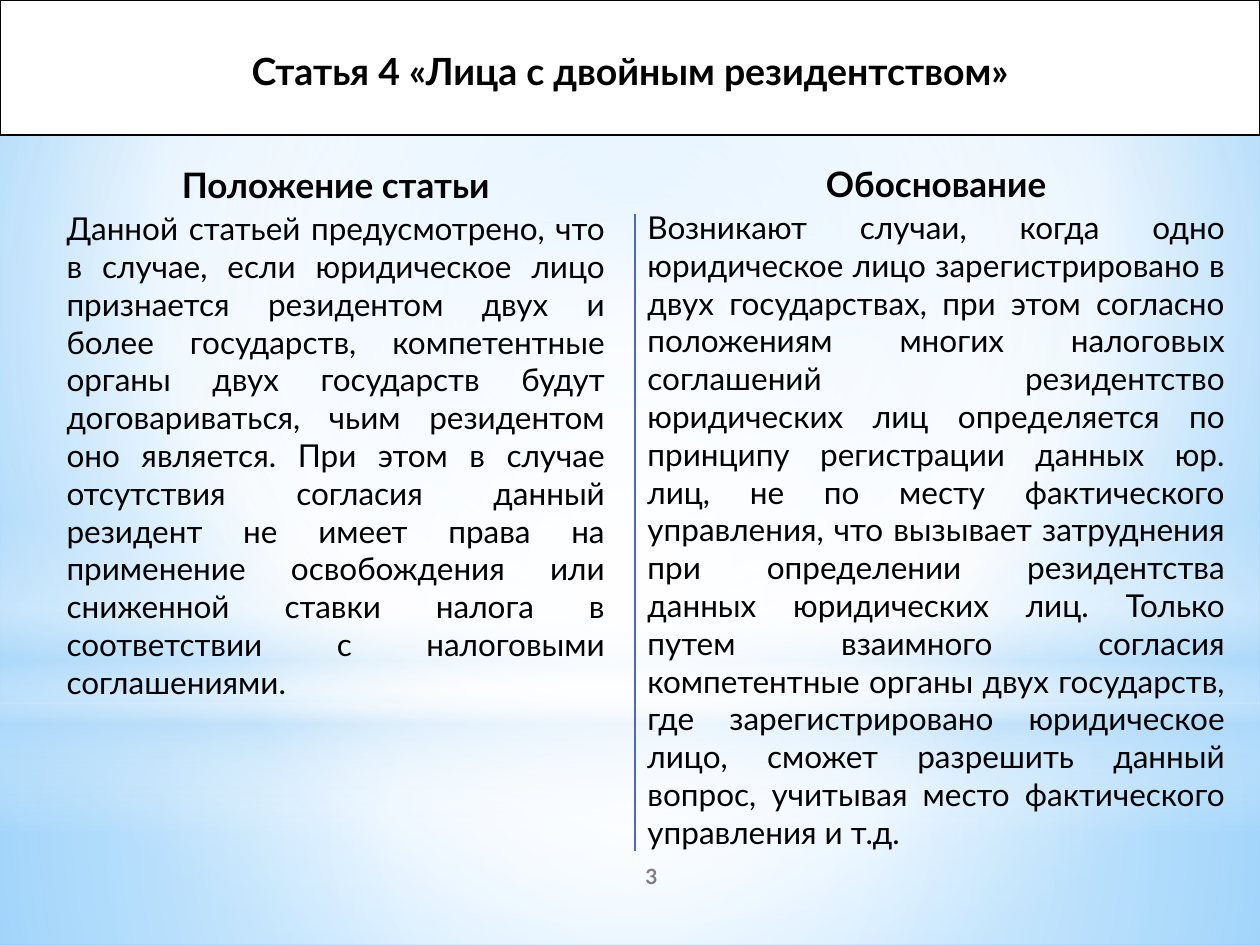
from dataclasses import dataclass

from lxml import etree
from pptx import Presentation
from pptx.dml.color import RGBColor
from pptx.enum.shapes import MSO_CONNECTOR, MSO_SHAPE
from pptx.enum.text import MSO_ANCHOR, MSO_AUTO_SIZE, PP_ALIGN
from pptx.oxml.ns import qn
from pptx.util import Inches, Pt

RECTANGLE, OVAL = MSO_SHAPE.RECTANGLE, MSO_SHAPE.OVAL
CENTER, JUSTIFY = PP_ALIGN.CENTER, PP_ALIGN.JUSTIFY
MIDDLE = MSO_ANCHOR.MIDDLE
STRAIGHT = MSO_CONNECTOR.STRAIGHT

BLACK = RGBColor(0x00, 0x00, 0x00)
WHITE = RGBColor(0xFF, 0xFF, 0xFF)
GRAY = RGBColor(0x80, 0x80, 0x80)
INDIGO = RGBColor(0x4E, 0x67, 0xC8)
PALE_BLUE = RGBColor(0xB4, 0xDC, 0xFA)
SKY = RGBColor(0x9E, 0xD5, 0xFF)
DEEP_SKY = RGBColor(0x5B, 0xB9, 0xFF)

FONT = "Lato"
COLUMNS, ROWS = 100, 75
CELL = Inches(0.1)

# Text formats
TITLE = {"size": Pt(21.4), "bold": True, "color": BLACK}
HEADING = {"size": Pt(20), "bold": True, "color": BLACK}
BODY = {"size": Pt(18), "bold": False, "color": BLACK}
NUMBER = {"size": Pt(12), "bold": True, "color": GRAY}

PROVISION = (
    "Данной статьей предусмотрено, что в случае, если юридическое лицо признается "
    "резидентом двух и более государств, компетентные органы двух государств будут "
    "договариваться, чьим резидентом оно является. При этом в случае отсутствия "
    "согласия данный резидент не имеет права на применение освобождения или "
    "сниженной ставки налога в соответствии с налоговыми соглашениями."
)
RATIONALE = (
    "Возникают случаи, когда одно юридическое лицо зарегистрировано в двух "
    "государствах, при этом согласно положениям многих налоговых соглашений "
    "резидентство юридических лиц определяется по принципу регистрации данных юр. "
    "лиц, не по месту фактического управления, что вызывает затруднения при "
    "определении резидентства данных юридических лиц. Только путем взаимного "
    "согласия компетентные органы двух государств, где зарегистрировано юридическое "
    "лицо, сможет разрешить данный вопрос, учитывая место фактического управления и т.д."
)


@dataclass
class Box:
    """An area of the slide in grid columns and rows."""
    column: float
    row: float
    width: float
    height: float

    def lengths(self):
        return [round(n * CELL) for n in (self.column, self.row, self.width, self.height)]


def set_gradient(parent, stops, focus=None):
    """Replace the solid fill with a circular gradient, or a downward one without focus."""
    solid = parent.find(qn("a:solidFill"))
    gradient = etree.Element(qn("a:gradFill"), rotWithShape="1")
    stop_list = etree.SubElement(gradient, qn("a:gsLst"))
    for position, color, opacity in stops:
        stop = etree.SubElement(stop_list, qn("a:gs"), pos=str(position * 1000))
        color_element = etree.SubElement(stop, qn("a:srgbClr"), val=str(color))
        if opacity < 100:
            etree.SubElement(color_element, qn("a:alpha"), val=str(opacity * 1000))
    if focus:
        circle = etree.SubElement(gradient, qn("a:path"))
        circle.set("path", "circle")
        sides = {side: str(share * 1000) for side, share in zip("ltrb", focus)}
        etree.SubElement(circle, qn("a:fillToRect"), **sides)
    else:
        etree.SubElement(gradient, qn("a:lin"), ang="5400000", scaled="0")
    parent.replace(solid, gradient)


def write(paragraph, text, text_format, alignment, space_before=0):
    paragraph.alignment = alignment
    paragraph.space_before = Pt(space_before)
    run = paragraph.add_run()
    run.text = text
    run.font.name = FONT
    for name, value in text_format.items():
        if name == "color":
            run.font.color.rgb = value
        else:
            setattr(run.font, name, value)


def add_text_box(slide, box):
    frame = slide.shapes.add_textbox(*box.lengths()).text_frame
    frame.word_wrap = True
    frame.vertical_anchor = MIDDLE
    return frame


def add_backdrop(slide, box):
    """Sky gradient with four translucent layers of light."""
    slide.background.fill.solid()
    slide.background.fill.fore_color.rgb = SKY
    set_gradient(slide.element.find(".//" + qn("p:bgPr")),
                 [(0, SKY, 100), (60, WHITE, 100), (100, DEEP_SKY, 100)],
                 (20, 10, 20, 60))
    middle = (50, 50, 50, 50)
    horizon = 55.8
    layers = [
        (RECTANGLE, horizon, box.height - horizon, middle,
         [(0, WHITE, 91), (37, WHITE, 76), (100, PALE_BLUE, 79)]),
        (RECTANGLE, 0, horizon, middle,
         [(0, WHITE, 89), (48, WHITE, 62), (100, PALE_BLUE, 79)]),
        (RECTANGLE, 41.2, 25, None,
         [(0, WHITE, 0), (29, WHITE, 30), (45, PALE_BLUE, 40),
          (55, WHITE, 26), (65, PALE_BLUE, 60), (100, WHITE, 0)]),
        (OVAL, 17.5, horizon, middle, [(0, WHITE, 100), (56, WHITE, 0)]),
    ]
    for kind, row, height, focus, stops in layers:
        area = Box(box.column, box.row + row, box.width, height)
        shape = slide.shapes.add_shape(kind, *area.lengths())
        shape.shadow.inherit = False
        shape.line.fill.background()
        shape.fill.solid()
        set_gradient(shape.element.spPr, stops, focus)


def add_title(slide, box, text):
    title = slide.shapes.title
    title.left, title.top, title.width, title.height = box.lengths()
    title.fill.solid()
    title.fill.fore_color.rgb = WHITE
    title.line.color.rgb = BLACK
    title.line.width = Pt(1.25)
    frame = title.text_frame
    frame.auto_size = MSO_AUTO_SIZE.NONE
    frame.vertical_anchor = MIDDLE
    frame.margin_top = Inches(0.1)
    write(frame.paragraphs[0], text, TITLE, CENTER)
    # Bring the banner in front of the backdrop
    title.element.getparent().append(title.element)


def add_column(slide, box, heading, body):
    frame = add_text_box(slide, box)
    write(frame.paragraphs[0], heading, HEADING, CENTER, 2)
    write(frame.add_paragraph(), body, BODY, JUSTIFY, 2)


def add_divider(slide, box):
    left, top, width, height = box.lengths()
    line = slide.shapes.add_connector(STRAIGHT, left, top, left + width, top + height)
    line.line.color.rgb = INDIGO
    line.line.width = Pt(0.75)
    etree.SubElement(line.element.spPr, qn("a:effectLst"))


def add_page_number(slide, box, number):
    write(add_text_box(slide, box).paragraphs[0], number, NUMBER, CENTER)


def main():
    presentation = Presentation()
    presentation.slide_width = COLUMNS * CELL
    presentation.slide_height = ROWS * CELL
    slide = presentation.slides.add_slide(presentation.slide_layouts[5])

    banner_height, middle = 10.7, 50.4
    add_backdrop(slide, Box(0, 0, COLUMNS, ROWS))
    add_title(slide, Box(0, 0, COLUMNS, banner_height),
              "Статья 4 «Лица с двойным резидентством»")
    add_column(slide, Box(4.3, banner_height, 44.7, 47.2), "Положение статьи", PROVISION)
    add_column(slide, Box(middle, 10.1, 47.8, 60.2), "Обоснование", RATIONALE)
    add_divider(slide, Box(middle, 17, 0, 50.5))
    add_page_number(slide, Box(41.7, 67.5, 20, 4), "3")
    presentation.save("out.pptx")


if __name__ == "__main__":
    main()
